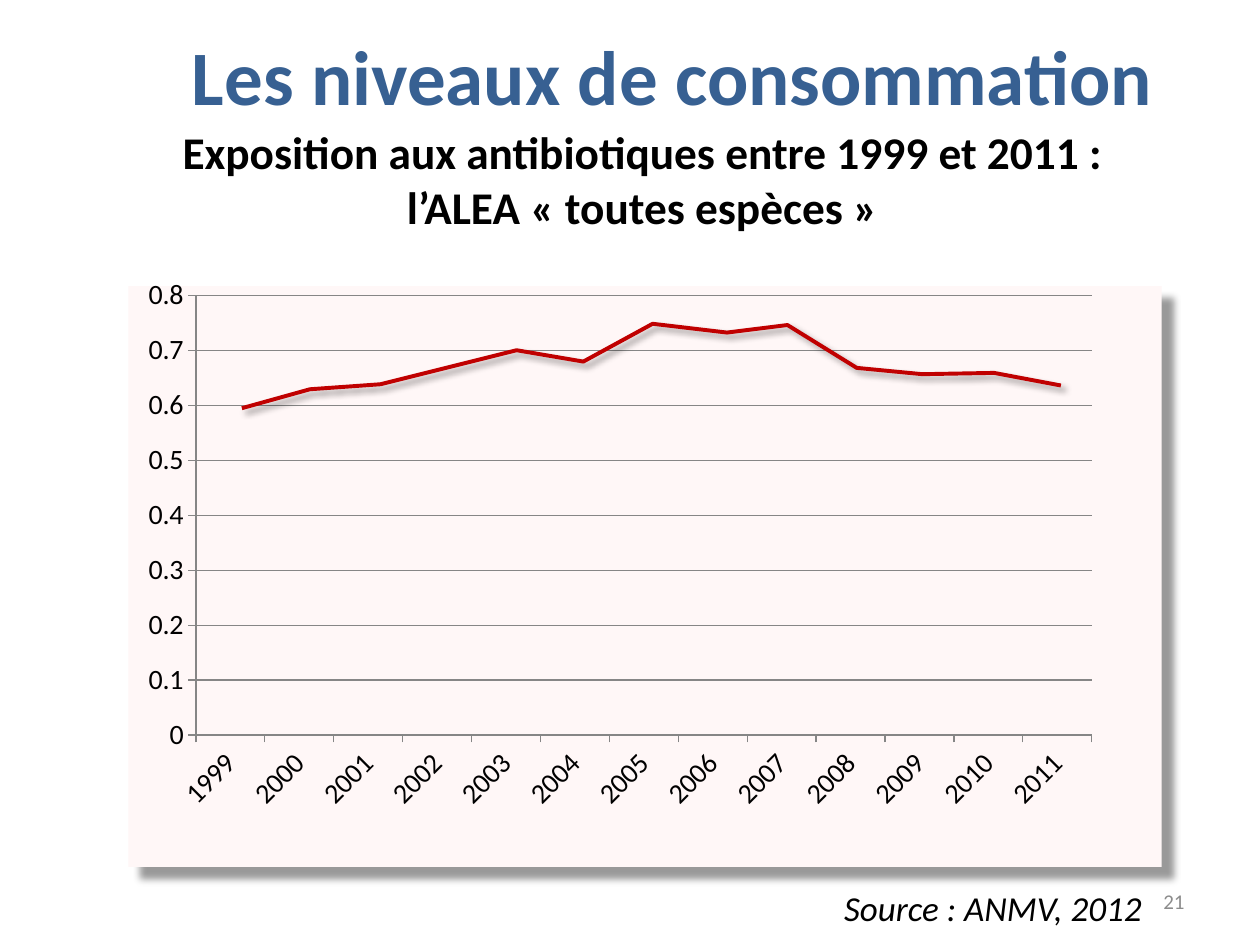
"""Build the slide on antibiotic exposure between 1999 and 2011."""
import lxml.etree
import pptx
import pptx.chart.data
import pptx.dml.color
import pptx.enum.chart
import pptx.enum.shapes
import pptx.enum.text
import pptx.oxml.ns
import pptx.util

WIDTH, HEIGHT = 10, 7.5
FONT = "Calibri"
ALIGN = pptx.enum.text.PP_ALIGN
ANCHOR = pptx.enum.text.MSO_ANCHOR

TEXTS = [
    {"text": "Les niveaux de consommation", "box": (0.84, 0.18, 9, 1.25), "size": 44,
     "color": "376092", "align": ALIGN.CENTER, "anchor": ANCHOR.TOP, "style": {"bold": True}},
    {"text": "Exposition aux antibiotiques entre 1999 et 2011 :\vl’ALEA «\u00a0toutes espèces\u00a0»".replace("\u00a0", " "),
     "box": (1, 0.99, 8.2, 0.91), "size": 25.9,
     "color": "000000", "align": ALIGN.CENTER, "anchor": ANCHOR.BOTTOM, "style": {"bold": True}},
    {"text": "21", "box": (7.17, 6.95, 2.33, 0.4), "size": 12,
     "color": "8C8C8C", "align": ALIGN.RIGHT, "anchor": ANCHOR.MIDDLE, "style": {}},
    {"text": "Source : ANMV, 2012", "box": (6.6, 6.99, 2.58, 0.44), "size": 20, "wrap": False,
     "color": "000000", "align": ALIGN.LEFT, "anchor": ANCHOR.TOP, "style": {"italic": True}},
]
PANEL = (1.02, 2.27, 8.2, 4.61)
CHART = (0.99, 2.1, 7.84, 4.43)
PLOT = {"x": 0.072, "y": 0.056, "w": 0.907, "h": 0.787}
YEARS = [str(year) for year in range(1999, 2012)]
VALUES = [0.01] + [None] * (len(YEARS) - 2) + [0.03]
AXIS = {"has_major_gridlines": True, "minimum_scale": 0, "maximum_scale": 0.8, "major_unit": 0.1}
CURVE = [(1.92, 3.24), (2.46, 3.09), (3.02, 3.05), (4.1, 2.78), (4.63, 2.87), (5.18, 2.57),
         (5.77, 2.64), (6.25, 2.58), (6.8, 2.92), (7.32, 2.97), (7.89, 2.96), (8.42, 3.06)]


def rgb(color):
    """Turn a hex string into a colour."""
    return pptx.dml.color.RGBColor.from_string(color)


def inches(values):
    """Turn numbers into lengths."""
    return [pptx.util.Inches(value) for value in values]


def apply(target, values):
    """Set each named attribute on the target."""
    for name, value in values.items():
        setattr(target, name, value)


def add_child(parent, tag, **attributes):
    """Append an XML element with the given attributes."""
    return lxml.etree.SubElement(parent, pptx.oxml.ns.qn(tag), attributes)


def style_line(line, color, points):
    """Give a line its colour and width."""
    line.color.rgb = rgb(color)
    line.width = pptx.util.Pt(points)


def add_shadow(shape, distance):
    """Cast a soft grey shadow to the lower right."""
    shape.shadow.inherit = False
    effects = shape.element.spPr.find(pptx.oxml.ns.qn("a:effectLst"))
    shadow = add_child(effects, "a:outerShdw", blurRad=str(pptx.util.Pt(4)),
                       dist=str(pptx.util.Pt(distance)), dir="2700000", algn="tl", rotWithShape="0")
    add_child(add_child(shadow, "a:srgbClr", val="000000"), "a:alpha", val="40000")


def add_panel(slide):
    """Draw the pale panel behind the chart."""
    panel = slide.shapes.add_shape(pptx.enum.shapes.MSO_SHAPE.RECTANGLE, *inches(PANEL))
    panel.fill.solid()
    panel.fill.fore_color.rgb = rgb("FFF7F7")
    panel.line.fill.background()
    add_shadow(panel, 10)


def add_text(slide, item):
    """Place one formatted text box."""
    frame = slide.shapes.add_textbox(*inches(item["box"])).text_frame
    apply(frame, {"word_wrap": item.get("wrap", True), "vertical_anchor": item["anchor"]})
    paragraph = frame.paragraphs[0]
    apply(paragraph, {"text": item["text"], "alignment": item["align"]})
    for run in paragraph.runs:
        apply(run.font, {"name": FONT, "size": pptx.util.Pt(item["size"]), **item["style"]})
        run.font.color.rgb = rgb(item["color"])


def add_chart(slide):
    """Add the line chart with its axes and plot area."""
    data = pptx.chart.data.CategoryChartData()
    data.categories = YEARS
    data.add_series("Series 1", VALUES)
    chart = slide.shapes.add_chart(pptx.enum.chart.XL_CHART_TYPE.LINE, *inches(CHART), data).chart
    apply(chart, {"has_legend": False, "has_title": False})
    apply(chart.font, {"name": FONT, "size": pptx.util.Pt(16)})
    chart.font.color.rgb = rgb("000000")
    chart.plots[0].vary_by_categories = False
    series = chart.plots[0].series[0]
    series.smooth = False
    series.marker.style = pptx.enum.chart.XL_MARKER_STYLE.NONE
    style_line(series.format.line, "C0504D", 2.25)
    apply(chart.value_axis, AXIS)
    style_line(chart.value_axis.major_gridlines.format.line, "868686", 0.75)
    for axis in (chart.category_axis, chart.value_axis):
        axis.major_tick_mark = pptx.enum.chart.XL_TICK_MARK.OUTSIDE
        style_line(axis.format.line, "868686", 0.75)
        apply(axis.tick_labels.font, {"name": FONT, "size": pptx.util.Pt(16)})
    apply(chart.value_axis.tick_labels, {"number_format": "General", "number_format_is_linked": False})
    labels = chart.category_axis.format.line and chart.category_axis.tick_labels.font
    labels.bold = False
    chart.element.find(".//" + pptx.oxml.ns.qn("c:catAx")).find(
        pptx.oxml.ns.qn("c:txPr")).find(pptx.oxml.ns.qn("a:bodyPr")).set("rot", "-2700000")
    area = chart.element.find(".//" + pptx.oxml.ns.qn("c:plotArea"))
    for old in area.findall(pptx.oxml.ns.qn("c:layout")):
        area.remove(old)
    layout = add_child(area, "c:layout")
    area.insert(0, layout)
    manual = add_child(layout, "c:manualLayout")
    add_child(manual, "c:layoutTarget", val="inner")
    for name in "xy":
        add_child(manual, f"c:{name}Mode", val="edge")
    for name, share in PLOT.items():
        add_child(manual, f"c:{name}", val=str(share))


def add_curve(slide):
    """Draw the exposure curve over the chart."""
    points = [inches(point) for point in CURVE]
    builder = slide.shapes.build_freeform(*points[0])
    builder.add_line_segments(points[1:], close=False)
    curve = builder.convert_to_shape()
    curve.fill.background()
    style_line(curve.line, "C00000", 2.25)
    add_shadow(curve, 3)


def main():
    """Build and save the slide."""
    presentation = pptx.Presentation()
    apply(presentation, {"slide_width": pptx.util.Inches(WIDTH), "slide_height": pptx.util.Inches(HEIGHT)})
    slide = presentation.slides.add_slide(presentation.slide_layouts[6])
    add_panel(slide)
    for item in TEXTS[:2]:
        add_text(slide, item)
    add_chart(slide)
    add_curve(slide)
    for item in TEXTS[2:]:
        add_text(slide, item)
    presentation.save("out.pptx")


if __name__ == "__main__":
    main()
